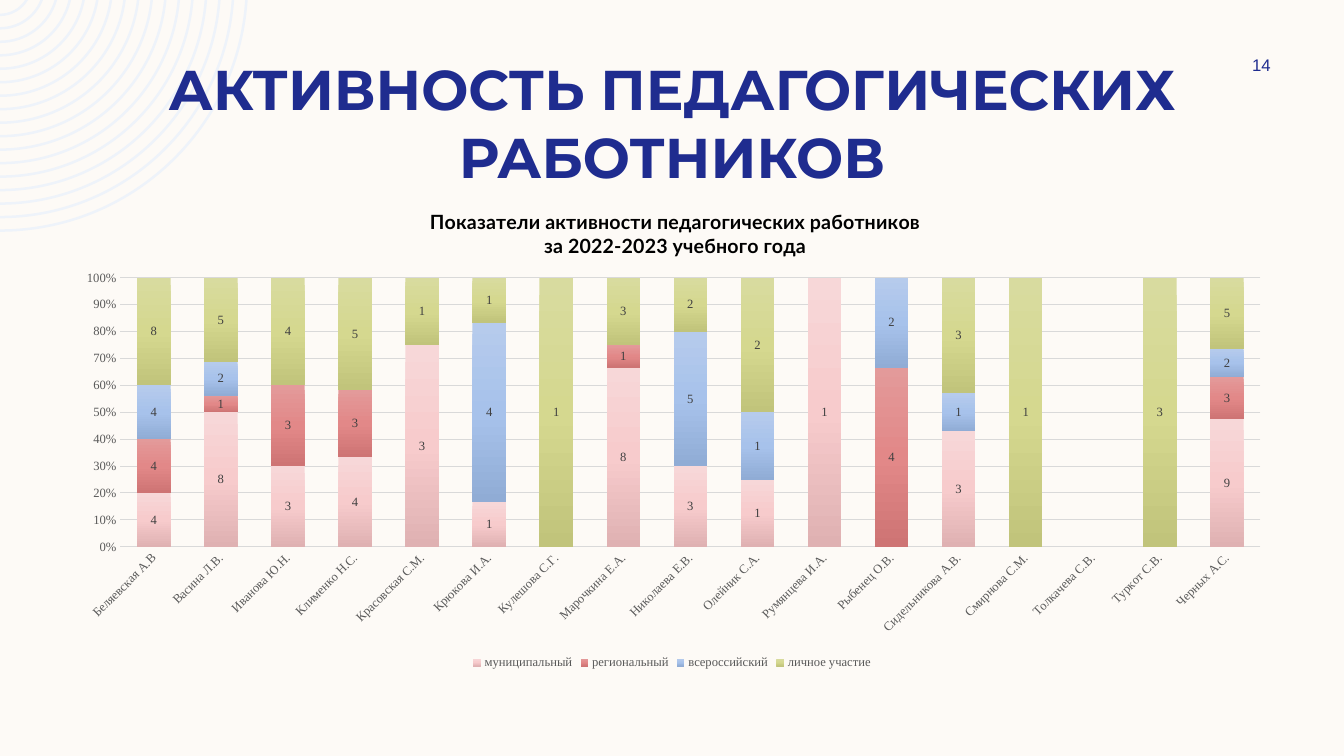
import copy
import math

import pptx
import pptx.chart.data
import pptx.dml.color
import pptx.enum.chart
import pptx.enum.text
import pptx.oxml
import pptx.oxml.ns
import pptx.util

PX = 914400 / 100.8
COLOURS = {
    "background": "FDFAF6",
    "arc": "EEF3FA",
    "navy": "1F2C8F",
    "black": "000000",
    "label": "404040",
    "axis": "595959",
    "grid": "D9D9D9",
}
GRADIENTS = {
    "муниципальный": ("F7D7D8", "F7CBCC", "DFB1B2"),
    "региональный": ("E39A9A", "E28888", "CE7474"),
    "всероссийский": ("B6CBEC", "A7C2EB", "90ACD5"),
    "личное участие": ("D8DB9F", "D5D88F", "C1C47B"),
}
ACTIVITY = {
    "Беляевская А.В": (4, 4, 4, 8),
    "Васина Л.В.": (8, 1, 2, 5),
    "Иванова Ю.Н.": (3, 3, None, 4),
    "Клименко Н.С.": (4, 3, None, 5),
    "Красовская С.М.": (3, None, None, 1),
    "Крюкова И.А.": (1, None, 4, 1),
    "Кулешова С.Г.": (None, None, None, 1),
    "Марочкина Е.А.": (8, 1, None, 3),
    "Николаева Е.В.": (3, None, 5, 2),
    "Олейник С.А.": (1, None, 1, 2),
    "Румянцева И.А.": (1, None, None, None),
    "Рыбенец О.В.": (None, 4, 2, None),
    "Сидельникова А.В.": (3, None, 1, 3),
    "Смирнова С.М.": (None, None, None, 1),
    "Толкачева С.В.": (None, None, None, None),
    "Туркот С.В.": (None, None, None, 3),
    "Черных А.С.": (9, 3, 2, 5),
}


def px(length):
    return pptx.util.Emu(round(length * PX))


def rgb(value):
    return pptx.dml.color.RGBColor.from_string(value)


def set_values(target, values):
    for name, value in values.items():
        setattr(target, name, value)


def format_font(font, name, size, colour, bold=False):
    set_values(font, {"name": name, "size": pptx.util.Pt(size), "bold": bold})
    font.color.rgb = rgb(COLOURS[colour])


def add_text(slide, text, box, font_values, anchor):
    shape = slide.shapes.add_textbox(*map(px, box))
    frame = shape.text_frame
    set_values(frame, {"word_wrap": True, "vertical_anchor": anchor})
    paragraph = frame.paragraphs[0]
    paragraph.alignment = pptx.enum.text.PP_ALIGN.CENTER
    run = paragraph.add_run()
    run.text = text
    format_font(run.font, *font_values)


def arc_points(radius, centre_y):
    start = math.asin(-centre_y / radius)
    handle = radius * 4 / 3 * math.tan((math.pi / 2 - start) / 4)
    x, y = radius * math.cos(start), 0
    bottom = centre_y + radius
    control = (x - handle * math.sin(start), y + handle * math.cos(start))
    points = [(x, y), control, (handle, bottom), (0, bottom)]
    return [(px(across), px(down)) for across, down in points]


def curve_contours(shape):
    path = next(shape._element.iter(pptx.oxml.ns.qn("a:path")))
    lines = path.findall(pptx.oxml.ns.qn("a:lnTo"))
    for first in range(0, len(lines), 7):
        for offset in (0, 4):
            group = lines[first + offset : first + offset + 3]
            curve = pptx.oxml.parse_xml(
                f'<a:cubicBezTo {pptx.oxml.ns.nsdecls("a")}/>'
            )
            group[0].addprevious(curve)
            for line in group:
                curve.append(line[0])
                path.remove(line)


def add_arcs(slide, count=17, centre_y=-16.4, outer=248.2, gap=13.48, width=2.5):
    builder = None
    for index in range(count):
        radius = outer - index * gap
        inner = arc_points(radius - width, centre_y)
        points = arc_points(radius, centre_y) + inner[::-1]
        if builder is None:
            builder = slide.shapes.build_freeform(*points[0])
        else:
            builder.move_to(*points[0])
        builder.add_line_segments(points[1:], close=True)
    shape = builder.convert_to_shape()
    curve_contours(shape)
    shape.shadow.inherit = False
    shape.fill.solid()
    shape.fill.fore_color.rgb = rgb(COLOURS["arc"])
    shape.line.fill.background()


def set_layout(element, target, **fractions):
    for old in element.findall(pptx.oxml.ns.qn("c:layout")):
        element.remove(old)
    modes = "".join(f'<c:{axis}Mode val="edge"/>' for axis in "xy")
    sizes = "".join(f'<c:{name} val="{value}"/>' for name, value in fractions.items())
    layout = pptx.oxml.parse_xml(
        f'<c:layout {pptx.oxml.ns.nsdecls("c")}><c:manualLayout>'
        f"{target}{modes}{sizes}</c:manualLayout></c:layout>"
    )
    text = element.find(pptx.oxml.ns.qn("c:tx"))
    element.insert(0 if text is None else 1, layout)


def format_series(series):
    fill = series.format.fill
    fill.gradient()
    fill.gradient_angle = 270
    stop_list = next(series._element.iter(pptx.oxml.ns.qn("a:gsLst")))
    stop_list.append(copy.deepcopy(stop_list[0]))
    for index, (stop, colour) in enumerate(
        zip(fill.gradient_stops, GRADIENTS[series.name])
    ):
        stop.color.rgb = rgb(colour)
        stop.position = index / 2
    series.invert_if_negative = False
    series.data_labels.show_value = True
    format_font(series.data_labels.font, "Times New Roman", 9, "label")


def format_axes(chart):
    none = pptx.enum.chart.XL_TICK_MARK.NONE
    categories, values = chart.category_axis, chart.value_axis
    for axis in (categories, values):
        set_values(axis, {"major_tick_mark": none, "minor_tick_mark": none})
        format_font(axis.tick_labels.font, "Times New Roman", 9, "axis")
    text_body = categories._element.find(pptx.oxml.ns.qn("c:txPr"))
    text_body.find(pptx.oxml.ns.qn("a:bodyPr")).set("rot", "-2700000")
    set_values(values, {"minimum_scale": 0, "maximum_scale": 1, "major_unit": 0.1})
    set_values(
        values.tick_labels, {"number_format": "0%", "number_format_is_linked": False}
    )
    values.format.line.fill.background()
    for line, width in (
        (categories.format.line, 1),
        (values.major_gridlines.format.line, 0.75),
    ):
        line.color.rgb = rgb(COLOURS["grid"])
        line.width = pptx.util.Pt(width)


def format_title(chart, lines):
    frame = chart.chart_title.text_frame
    for index, line in enumerate(lines):
        paragraph = frame.add_paragraph() if index else frame.paragraphs[0]
        run = paragraph.add_run()
        run.text = line
        format_font(run.font, "Lato", 14, "black", True)
    set_layout(chart.chart_title._element, "", x=0.3, y=0.04)


def add_activity_chart(slide, box):
    data = pptx.chart.data.CategoryChartData()
    data.categories = list(ACTIVITY)
    for name, values in zip(GRADIENTS, zip(*ACTIVITY.values())):
        data.add_series(name, values)
    kind = pptx.enum.chart.XL_CHART_TYPE.COLUMN_STACKED_100
    chart = slide.shapes.add_chart(kind, *map(px, box), data).chart
    format_font(chart.font, "Times New Roman", 10, "black")
    plot = chart.plots[0]
    set_values(plot, {"gap_width": 100, "overlap": 100, "vary_by_categories": False})
    for series in plot.series:
        format_series(series)
    format_axes(chart)
    lines = "Показатели активности педагогических работников", "за 2022-2023 учебного года"
    format_title(chart, lines)
    chart.has_legend = True
    position = pptx.enum.chart.XL_LEGEND_POSITION.BOTTOM
    set_values(chart.legend, {"position": position, "include_in_layout": False})
    format_font(chart.legend.font, "Times New Roman", 9, "axis")
    inner = '<c:layoutTarget val="inner"/>'
    plot_area = chart._chartSpace.chart.plotArea
    set_layout(plot_area, inner, x=0.05, y=0.19, w=0.93, h=0.55)


def main():
    presentation = pptx.Presentation()
    set_values(presentation, {"slide_width": px(1344), "slide_height": px(756)})
    slide = presentation.slides.add_slide(presentation.slide_layouts[6])
    slide.background.fill.solid()
    slide.background.fill.fore_color.rgb = rgb(COLOURS["background"])
    anchors = pptx.enum.text.MSO_ANCHOR
    add_arcs(slide)
    heading = "АКТИВНОСТЬ ПЕДАГОГИЧЕСКИХ РАБОТНИКОВ"
    heading_font = ("Montserrat", 40, "navy", True)
    add_text(slide, heading, (84, 50, 1176, 85), heading_font, anchors.TOP)
    add_text(slide, "14", (1207, 50, 109, 30), ("Arial", 12, "navy"), anchors.MIDDLE)
    add_activity_chart(slide, (59, 185, 1226, 489))
    presentation.save("out.pptx")


if __name__ == "__main__":
    main()
